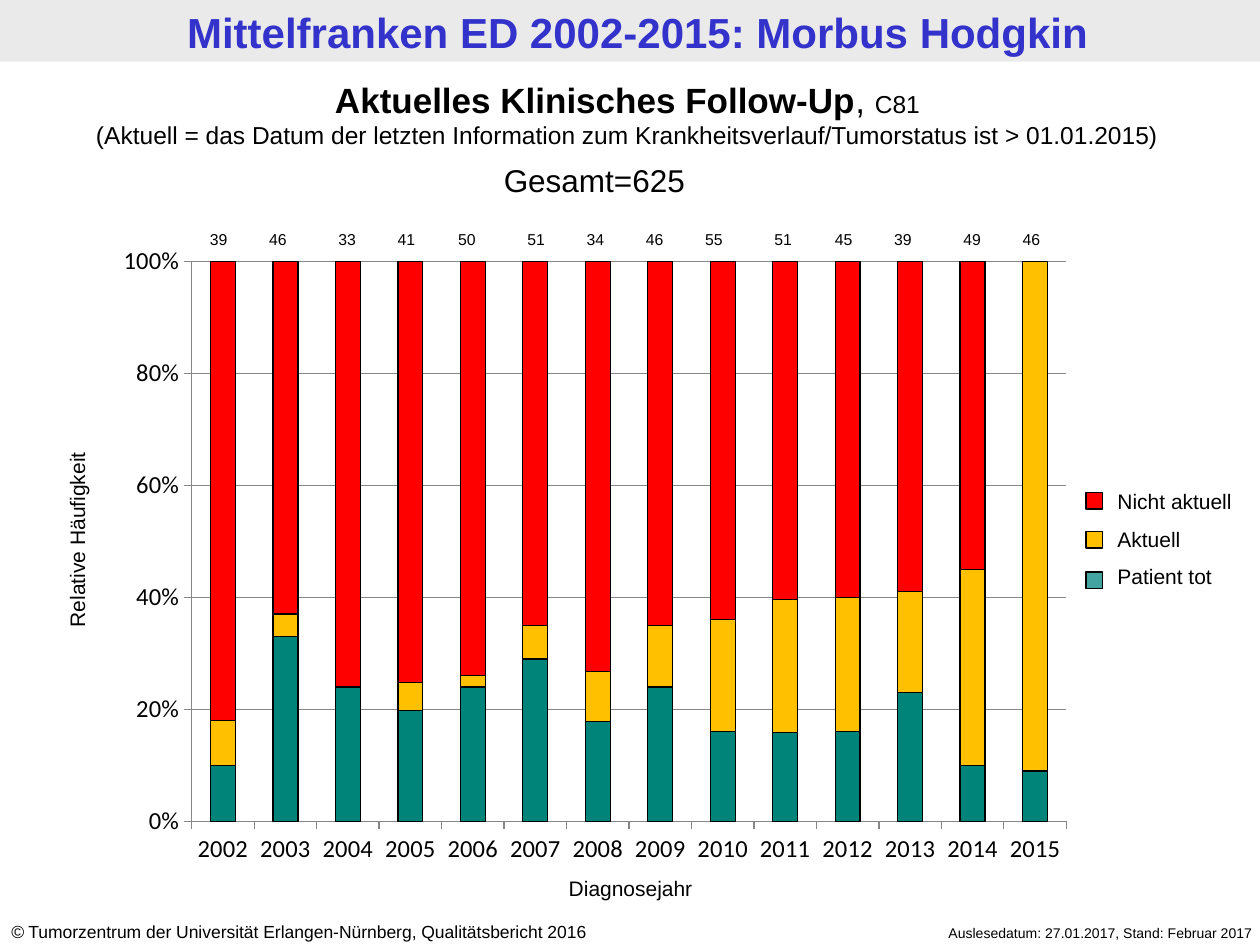
from lxml.etree import SubElement
from pptx import Presentation
from pptx.chart.data import CategoryChartData
from pptx.dml.color import RGBColor
from pptx.enum.chart import XL_CHART_TYPE, XL_TICK_MARK
from pptx.enum.shapes import MSO_SHAPE
from pptx.enum.text import PP_ALIGN
from pptx.oxml.ns import qn
from pptx.util import Inches, Pt

YEARS = [str(year) for year in range(2002, 2016)]
SERIES = [
    ("Patient tot", "008378",
     [10, 33, 24, 20, 24, 29, 18, 24, 16, 16, 16, 23, 10, 9]),
    ("Aktuell", "FFC000",
     [8, 4, 0, 5, 2, 6, 9, 11, 20, 24, 24, 18, 35, 91]),
    ("Nicht aktuell", "FF0000",
     [82, 63, 76, 76, 74, 65, 74, 65, 64, 61, 60, 59, 55, None]),
]
# Cases per year, each with the left edge of its label
CASES = [(39, 1.46), (46, 1.93), (33, 2.48), (41, 2.95), (50, 3.43),
         (51, 3.98), (34, 4.45), (46, 4.92), (55, 5.39), (51, 5.94),
         (45, 6.42), (39, 6.89), (49, 7.44), (46, 7.91)]
LEGEND_KEYS = [("FF0000", 3.91, None), ("FFC000", 4.22, None),
               ("008380", 4.54, 74)]


def color(value):
    return RGBColor.from_string(value)


def place(left, top, width, height):
    return Inches(left), Inches(top), Inches(width), Inches(height)


def add_text(page, area, paragraphs, size, align=PP_ALIGN.LEFT,
             font_color="000000", bold=None, gap=0):
    """Each paragraph is a list of (text, run settings) pairs."""
    box = page.shapes.add_textbox(*place(*area))
    frame = box.text_frame
    frame.word_wrap = True
    for index, runs in enumerate(paragraphs):
        para = frame.paragraphs[0] if index == 0 else frame.add_paragraph()
        para.alignment = align
        if index and gap:
            para.space_before = Pt(gap)
        para.font.name = "Arial"
        para.font.size = Pt(size)
        para.font.bold = bold
        para.font.color.rgb = color(font_color)
        for text, settings in runs:
            span = para.add_run()
            span.text = text
            for name, value in settings.items():
                setattr(span.font, name, value)
    return box


def add_line(page, area, text, size, **settings):
    return add_text(page, area, [[(text, {})]], size, **settings)


def add_rectangle(page, area, fill, outline=None, opacity=None):
    box = page.shapes.add_shape(MSO_SHAPE.RECTANGLE, *place(*area))
    box.shadow.inherit = False
    box.fill.solid()
    box.fill.fore_color.rgb = color(fill)
    if opacity:
        tint = box.fill._xPr.find(".//" + qn("a:srgbClr"))
        SubElement(tint, qn("a:alpha"), val=str(opacity * 1000))
    if outline:
        box.line.color.rgb = color(outline)
        box.line.width = Pt(0.75)
    else:
        box.line.fill.background()


def set_plot_area(chart, **shares):
    """Fix the inner plot area as shares of the chart's size."""
    plot_area = chart._chartSpace.chart.plotArea
    layout = plot_area.find(qn("c:layout"))
    if layout is None:
        layout = SubElement(plot_area, qn("c:layout"))
        plot_area.insert(0, layout)
    manual = SubElement(layout, qn("c:manualLayout"))
    settings = {"layoutTarget": "inner", "xMode": "edge", "yMode": "edge"}
    for name, value in {**settings, **shares}.items():
        SubElement(manual, qn("c:" + name), val=str(value))


def add_follow_up_chart(page):
    data = CategoryChartData()
    data.categories = YEARS
    for name, _, values in SERIES:
        data.add_series(name, values)
    chart = page.shapes.add_chart(XL_CHART_TYPE.COLUMN_STACKED_100,
                                  *place(0.82, 1.87, 7.8, 5.11), data).chart
    chart.has_legend = False
    chart.has_title = False
    chart.font.name = "Calibri"
    chart.font.size = Pt(14)
    chart.font.color.rgb = color("000000")
    set_plot_area(chart, x=0.09, y=0.04, w=0.89, h=0.87)

    # Columns
    plot = chart.plots[0]
    plot.vary_by_categories = False
    plot.gap_width = 150
    plot.overlap = 100
    for series, (_, fill, _) in zip(plot.series, SERIES):
        series.format.fill.solid()
        series.format.fill.fore_color.rgb = color(fill)
        series.format.line.color.rgb = color("000000")
        series.format.line.width = Pt(0.75)

    # Axes
    values = chart.value_axis
    values.minimum_scale, values.maximum_scale = 0, 1
    values.major_unit = 0.2
    values.has_major_gridlines = True
    values.tick_labels.number_format = "0%"
    values.tick_labels.number_format_is_linked = False
    for axis in (chart.category_axis, values):
        axis.major_tick_mark = XL_TICK_MARK.OUTSIDE
        axis.tick_labels.font.size = Pt(14)
    for part in (chart.category_axis, values, values.major_gridlines):
        part.format.line.color.rgb = color("868686")
        part.format.line.width = Pt(0.75)


def add_legend(page):
    labels = [[(name, {})] for name, _, _ in reversed(SERIES)]
    add_text(page, (8.77, 3.83, 1.42, 0.91), labels, 12, gap=6.9)
    for fill, top, opacity in LEGEND_KEYS:
        add_rectangle(page, (8.62, top, 0.13, 0.13), fill, "000000", opacity)


def main():
    deck = Presentation()
    deck.slide_width, deck.slide_height = Inches(10), Inches(7.5)
    page = deck.slides.add_slide(deck.slide_layouts[6])
    center = PP_ALIGN.CENTER

    # Title band
    add_rectangle(page, (0, 0, 10, 0.49), "EAEAEA")
    title = add_line(page, (0.06, 0.01, 10, 0.49),
                     "Mittelfranken ED 2002-2015: Morbus Hodgkin", 24,
                     align=center, font_color="3333CC", bold=True)
    title.text_frame.margin_top = title.text_frame.margin_bottom = Inches(0.04)

    # Footer
    add_text(page, (-0.01, 7.26, 5.24, 0.27),
             [[("©", {"italic": True}),
               (" Tumorzentrum der Universität Erlangen-Nürnberg, "
                "Qualitätsbericht 2016", {})]], 10)
    add_line(page, (6.65, 7.29, 3.39, 0.24),
             "Auslesedatum: 27.01.2017, Stand: Februar 2017", 8,
             align=PP_ALIGN.RIGHT)

    # Chart with axis titles
    add_follow_up_chart(page)
    axis_title = add_line(page, (-0.59, 4.13, 2.41, 0.31),
                          "Relative Häufigkeit", 12, align=center)
    axis_title.rotation = 270
    add_line(page, (3.88, 6.9, 2.25, 0.31), "Diagnosejahr", 12, align=center)

    # Headings
    add_text(page, (-0.04, 0.57, 10.04, 0.67),
             [[("Aktuelles Klinisches Follow-Up",
                {"size": Pt(20), "bold": True}),
               (", ", {"size": Pt(20)}), ("C81", {})],
              [("(Aktuell = das Datum der letzten Information zum "
                "Krankheitsverlauf/Tumorstatus ist > 01.01.2015)", {})]],
             14, align=center)
    add_line(page, (3.9, 1.23, 2.2, 0.4), "Gesamt=625", 18)

    # Legend and case numbers
    add_legend(page)
    for count, left in CASES:
        add_line(page, (left, 1.77, 0.55, 0.25), str(count), 9, align=center)

    deck.save("out.pptx")


if __name__ == "__main__":
    main()
